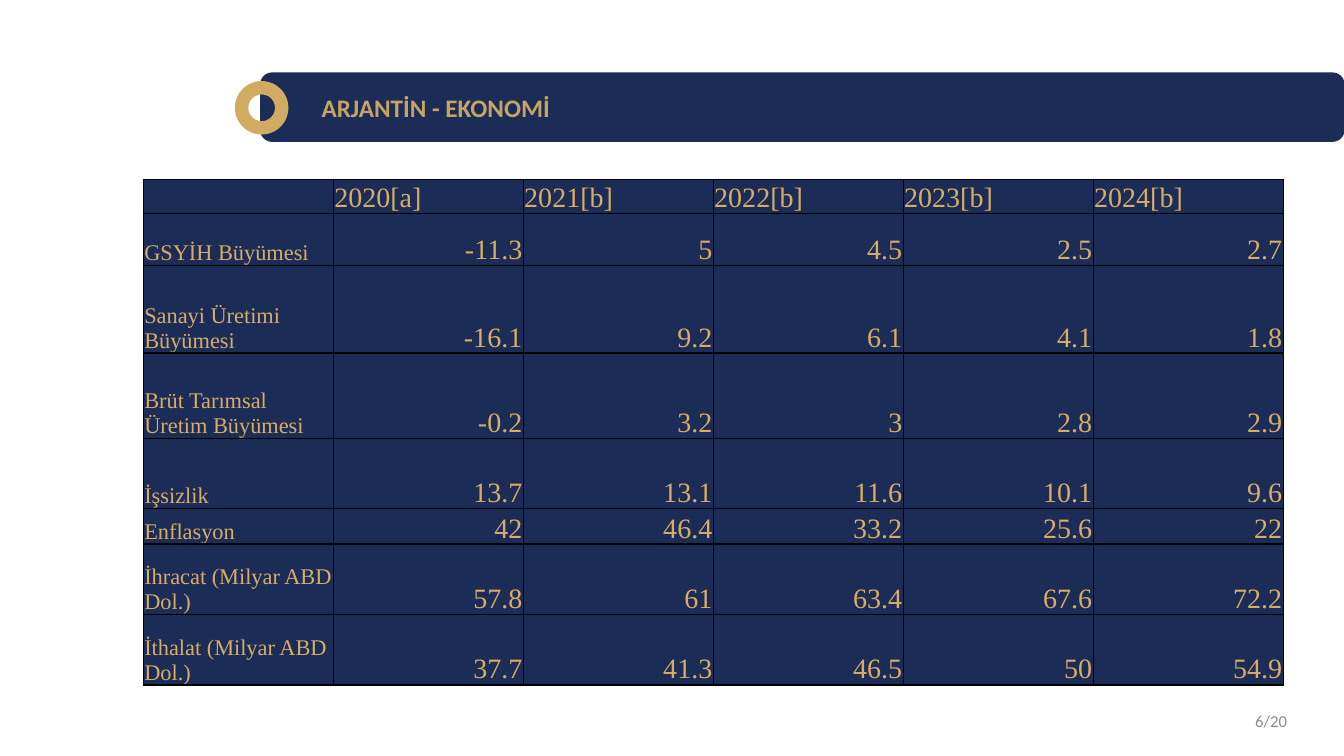
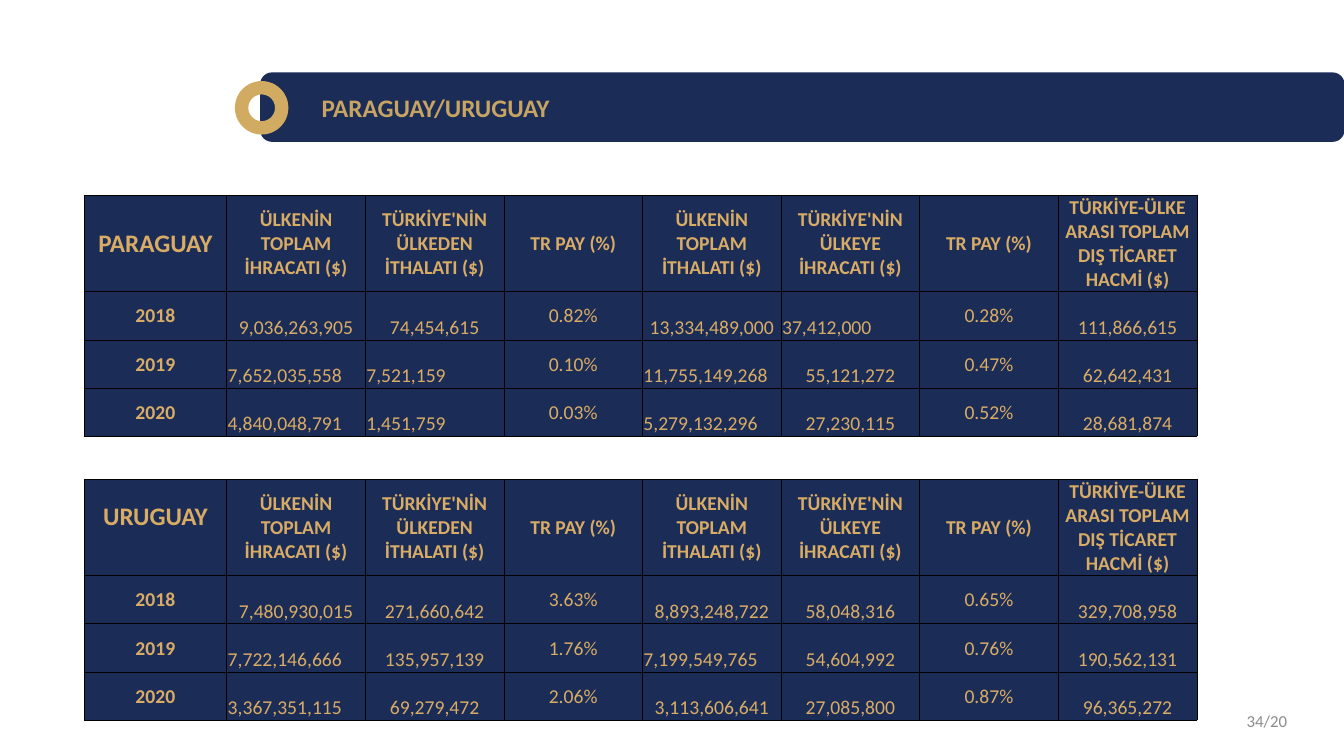
import pptx
import pptx.util
import pptx.dml.color
import pptx.enum.shapes
import pptx.enum.text
import pptx.oxml
import pptx.oxml.ns

Pt = pptx.util.Pt
Align = pptx.enum.text.PP_ALIGN
Anchor = pptx.enum.text.MSO_ANCHOR
Preset = pptx.enum.shapes.MSO_SHAPE

# Content
ECONOMY = {
    "title": "ARJANTİN - EKONOMİ",
    "page": "6/20",
    "indicators": [
        ["", "2020[a]", "2021[b]", "2022[b]", "2023[b]", "2024[b]"],
        ["GSYİH Büyümesi", "-11.3", "5", "4.5", "2.5", "2.7"],
        ["Sanayi Üretimi Büyümesi", "-16.1", "9.2", "6.1", "4.1", "1.8"],
        ["Brüt Tarımsal Üretim Büyümesi", "-0.2", "3.2", "3", "2.8", "2.9"],
        ["İşsizlik", "13.7", "13.1", "11.6", "10.1", "9.6"],
        ["Enflasyon", "42", "46.4", "33.2", "25.6", "22"],
        ["İhracat (Milyar ABD Dol.)", "57.8", "61", "63.4", "67.6", "72.2"],
    ],
    "imports": [["İthalat (Milyar ABD Dol.)", "37.7", "41.3", "46.5", "50", "54.9"]],
}
TRADE_HEADINGS = [
    "ÜLKENİN TOPLAM İHRACATI ($)", "TÜRKİYE'NİN ÜLKEDEN İTHALATI ($)", "TR PAY (%)",
    "ÜLKENİN TOPLAM İTHALATI ($)", "TÜRKİYE'NİN ÜLKEYE İHRACATI ($)", "TR PAY (%)",
    "TÜRKİYE-ÜLKE ARASI TOPLAM DIŞ TİCARET HACMİ ($)",
]
# "left" lists the (row, column) cells whose figures are left-aligned
TRADE = {
    "title": "PARAGUAY/URUGUAY",
    "page": "34/20",
    "countries": [
        {"name": "PARAGUAY", "top": 139.5, "name_lift": 0,
         "left": {(1, 5), (2, 1), (2, 2), (2, 4), (3, 1), (3, 2), (3, 4)},
         "years": [
             ["2018", "9,036,263,905", "74,454,615", "0.82%", "13,334,489,000",
              "37,412,000", "0.28%", "111,866,615"],
             ["2019", "7,652,035,558", "7,521,159", "0.10%", "11,755,149,268",
              "55,121,272", "0.47%", "62,642,431"],
             ["2020", "4,840,048,791", "1,451,759", "0.03%", "5,279,132,296",
              "27,230,115", "0.52%", "28,681,874"]]},
        {"name": "URUGUAY", "top": 342.3, "name_lift": 16,
         "left": {(2, 1), (2, 4), (3, 1)},
         "years": [
             ["2018", "7,480,930,015", "271,660,642", "3.63%", "8,893,248,722",
              "58,048,316", "0.65%", "329,708,958"],
             ["2019", "7,722,146,666", "135,957,139", "1.76%", "7,199,549,765",
              "54,604,992", "0.76%", "190,562,131"],
             ["2020", "3,367,351,115", "69,279,472", "2.06%", "3,113,606,641",
              "27,085,800", "0.87%", "96,365,272"]]},
    ],
}

# Shared style
COLORS = {"navy": "1B2C57", "ring": "D1AB61", "title": "C7A462",
          "cell": "D9AC65", "page": "8C8C8C", "border": "000000"}
TITLE_FONT = {"name": "Calibri", "size": Pt(18), "bold": True}
PAGE_FONT = {"name": "Calibri", "size": Pt(12)}
TITLE_BOX = (222.5, 62.6, 535.7, 28.8)
PAGE_BOX = (710.6, 500.4, 216, 28.8)
BAND_BOX = (186.3, 52.2, 773.7, 48.6)
RING_BOX = (167.8, 57.9, 38.2, 38.2)

# Table measures
ECONOMY_LEFT, ECONOMY_TOP = 102.4, 128
ECONOMY_WIDTHS = [135.7] * 6
ECONOMY_HEIGHTS = [24.6, 37, 62.6, 60.9, 50.2, 25.4, 50.2]
IMPORTS_HEIGHTS = [50.4]
TRADE_LEFT = 60
TRADE_WIDTHS = [102] + [99] * 7
TRADE_HEIGHTS = [67.9] + [34.4] * 3


def color(name):
    return pptx.dml.color.RGBColor.from_string(COLORS[name])


def set_attributes(target, values):
    for name, value in values.items():
        setattr(target, name, value)


def points(box):
    return [Pt(length) for length in box]


def write(paragraph, text, alignment, font, color_name):
    paragraph.alignment = alignment
    if text:
        run = paragraph.add_run()
        run.text = text
        set_attributes(run.font, font)
        run.font.color.rgb = color(color_name)


def add_preset(slide, preset, box, fill, line=None):
    shape = slide.shapes.add_shape(preset, *points(box))
    shape.shadow.inherit = False
    shape.fill.solid()
    shape.fill.fore_color.rgb = color(fill)
    if line:
        shape.line.color.rgb = color(line)
        shape.line.width = Pt(1)
    else:
        shape.line.fill.background()


def add_framed_slide(presentation, content):
    """Slide with title band, ring, title and page number."""
    slide = presentation.slides.add_slide(presentation.slide_layouts[5])
    add_preset(slide, Preset.ROUNDED_RECTANGLE, BAND_BOX, "navy", "navy")
    add_preset(slide, Preset.DONUT, RING_BOX, "ring")

    title = slide.shapes.title
    slide.shapes._spTree.append(title._element)  # bring in front of the band
    page = slide.shapes.add_textbox(*points(PAGE_BOX))
    for shape, box, text, anchor, alignment, font, name in (
            (title, TITLE_BOX, content["title"], Anchor.TOP, Align.LEFT, TITLE_FONT, "title"),
            (page, PAGE_BOX, content["page"], Anchor.MIDDLE, Align.RIGHT, PAGE_FONT, "page")):
        set_attributes(shape, dict(zip(("left", "top", "width", "height"), points(box))))
        set_attributes(shape.text_frame, {
            "word_wrap": True, "vertical_anchor": anchor,
            "auto_size": pptx.enum.text.MSO_AUTO_SIZE.NONE})
        write(shape.text_frame.paragraphs[0], text, alignment, font, name)
    return slide


def add_borders(cell, width):
    properties = cell._tc.get_or_add_tcPr()
    for index, side in enumerate(("lnL", "lnR", "lnT", "lnB")):
        properties.insert(index, pptx.oxml.parse_xml(
            f'<a:{side} {pptx.oxml.ns.nsdecls("a")} w="{Pt(width)}"><a:solidFill>'
            f'<a:srgbClr val="{COLORS["border"]}"/></a:solidFill></a:{side}>'))


def add_data_table(slide, rows, left, top, widths, heights, border, cell_format):
    """cell_format(row, column) gives font, alignment, anchor and bottom margin."""
    table = slide.shapes.add_table(
        len(rows), len(widths), *points((left, top, sum(widths), sum(heights)))).table
    set_attributes(table, {"first_row": False, "horz_banding": False})
    for column, width in zip(table.columns, widths):
        column.width = Pt(width)
    for row_index, (row, height) in enumerate(zip(rows, heights)):
        table.rows[row_index].height = Pt(height)
        for column_index, text in enumerate(row):
            cell = table.cell(row_index, column_index)
            font, alignment, anchor, bottom = cell_format(row_index, column_index)
            set_attributes(cell, {
                "vertical_anchor": anchor, "margin_left": Pt(0.7), "margin_right": Pt(0.7),
                "margin_top": Pt(0.7), "margin_bottom": Pt(bottom)})
            cell.fill.solid()
            cell.fill.fore_color.rgb = color("navy")
            add_borders(cell, border)
            write(cell.text_frame.paragraphs[0], text, alignment, font, "cell")


def build_economy(presentation):
    slide = add_framed_slide(presentation, ECONOMY)

    def formatter(header_rows):
        def cell_format(row, column):
            font = {"name": "Times New Roman", "size": Pt(20 if column else 16)}
            is_figure = column and row >= header_rows
            return font, Align.RIGHT if is_figure else Align.LEFT, Anchor.BOTTOM, 0
        return cell_format

    imports_top = ECONOMY_TOP + sum(ECONOMY_HEIGHTS)
    for key, top, heights, header_rows in (
            ("indicators", ECONOMY_TOP, ECONOMY_HEIGHTS, 1),
            ("imports", imports_top, IMPORTS_HEIGHTS, 0)):
        add_data_table(slide, ECONOMY[key], ECONOMY_LEFT, top, ECONOMY_WIDTHS,
                       heights, 1, formatter(header_rows))


def build_trade(presentation):
    slide = add_framed_slide(presentation, TRADE)
    for country in TRADE["countries"]:
        def cell_format(row, column):
            is_name = row == 0 and column == 0
            font = {"name": "Calibri", "size": Pt(18 if is_name else 14),
                    "bold": row == 0 or column == 0}
            is_amount = row > 0 and column not in (0, 3, 6)
            return (font,
                    Align.LEFT if (row, column) in country["left"] else Align.CENTER,
                    Anchor.BOTTOM if is_amount else Anchor.MIDDLE,
                    country["name_lift"] if is_name else 0)

        rows = [[country["name"]] + TRADE_HEADINGS] + country["years"]
        add_data_table(slide, rows, TRADE_LEFT, country["top"], TRADE_WIDTHS,
                       TRADE_HEIGHTS, 0.5, cell_format)


def main():
    presentation = pptx.Presentation()
    set_attributes(presentation, {"slide_width": Pt(960), "slide_height": Pt(540)})
    build_economy(presentation)
    build_trade(presentation)
    presentation.save("out.pptx")


if __name__ == "__main__":
    main()
